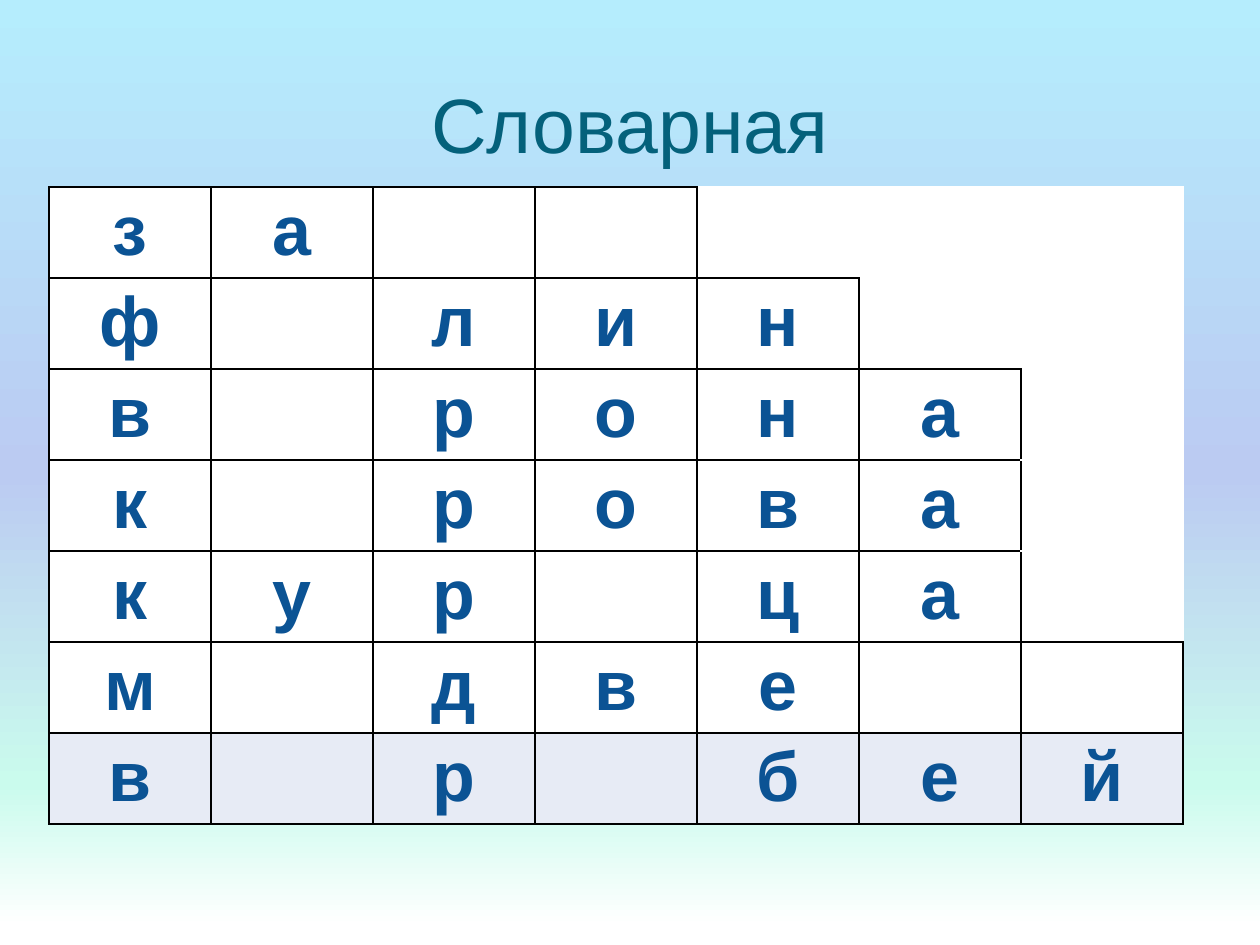
from lxml.etree import SubElement
from pptx import Presentation
from pptx.dml.color import RGBColor
from pptx.enum.text import MSO_ANCHOR, PP_ALIGN
from pptx.oxml.ns import qn
from pptx.util import Pt

TITLE = "Словарная"
WORDS = ["за  ", "ф лин", "в рона", "к рова", "кур ца", "м две  ", "в р бей"]
BACKGROUND = [(0, "B5EDFD"), (50, "BBCBF2"), (83, "CAFBED"), (98, "FFFFFF")]
FONT = "Arial"
LEFT, TOP, CELL_WIDTH, CELL_HEIGHT = 49, 187, 162, 91
COLUMNS = max(map(len, WORDS))
SIDES = [("a:lnL", 0, -1), ("a:lnR", 0, 1), ("a:lnT", -1, 0), ("a:lnB", 1, 0)]


def px(count):
    return round(count * 914400 / 126)


def color(code):
    return RGBColor.from_string(code)


def style(paragraph, size, code, bold=False):
    paragraph.alignment = PP_ALIGN.CENTER
    for run in paragraph.runs:
        run.font.name = FONT
        run.font.size = Pt(size)
        run.font.bold = bold
        run.font.color.rgb = color(code)


def in_word(row, column):
    return 0 <= row < len(WORDS) and 0 <= column < len(WORDS[row])


def add_borders(cell, row, column):
    properties = cell._tc.get_or_add_tcPr()
    for tag, down, across in SIDES:
        inked = in_word(row, column) or in_word(row + down, column + across)
        border = SubElement(properties, qn(tag), w=str(Pt(1)))
        fill = SubElement(border, qn("a:solidFill"))
        SubElement(fill, qn("a:srgbClr"), val="000000" if inked else "FFFFFF")


def paint_background(slide):
    fill = slide.background.fill
    fill.gradient()
    fill.gradient_angle = 270
    stops = next(slide._element.iter(qn("a:gsLst")))
    for stop in list(stops):
        stops.remove(stop)
    for percent, code in BACKGROUND:
        stop = SubElement(stops, qn("a:gs"), pos=str(percent * 1000))
        SubElement(stop, qn("a:srgbClr"), val=code)


def add_crossword(slide):
    grid = slide.shapes.add_table(
        len(WORDS), COLUMNS, px(LEFT), px(TOP),
        px(CELL_WIDTH * COLUMNS), px(CELL_HEIGHT * len(WORDS))).table
    grid.first_row = grid.horz_banding = False
    for row, word in enumerate(WORDS):
        for column, letter in enumerate(word.ljust(COLUMNS)):
            cell = grid.cell(row, column)
            cell.text = letter.strip()
            cell.margin_top = cell.margin_bottom = px(5)
            style(cell.text_frame.paragraphs[0], 40, "0B5394", bold=True)
            add_borders(cell, row, column)
            cell.fill.solid()
            last = row == len(WORDS) - 1
            cell.fill.fore_color.rgb = color("E7EBF5" if last else "FFFFFF")


def main():
    deck = Presentation()
    deck.slide_width, deck.slide_height = px(1260), px(945)
    slide = deck.slides.add_slide(deck.slide_layouts[5])
    paint_background(slide)
    add_crossword(slide)

    title = slide.shapes.title
    title.left, title.top, title.width, title.height = map(px, (63, 38, 1134, 157))
    frame = title.text_frame
    frame.text = TITLE
    frame.vertical_anchor = MSO_ANCHOR.MIDDLE
    frame.margin_top = px(18)
    style(frame.paragraphs[0], 44, "04617B")

    deck.save("out.pptx")


if __name__ == "__main__":
    main()
